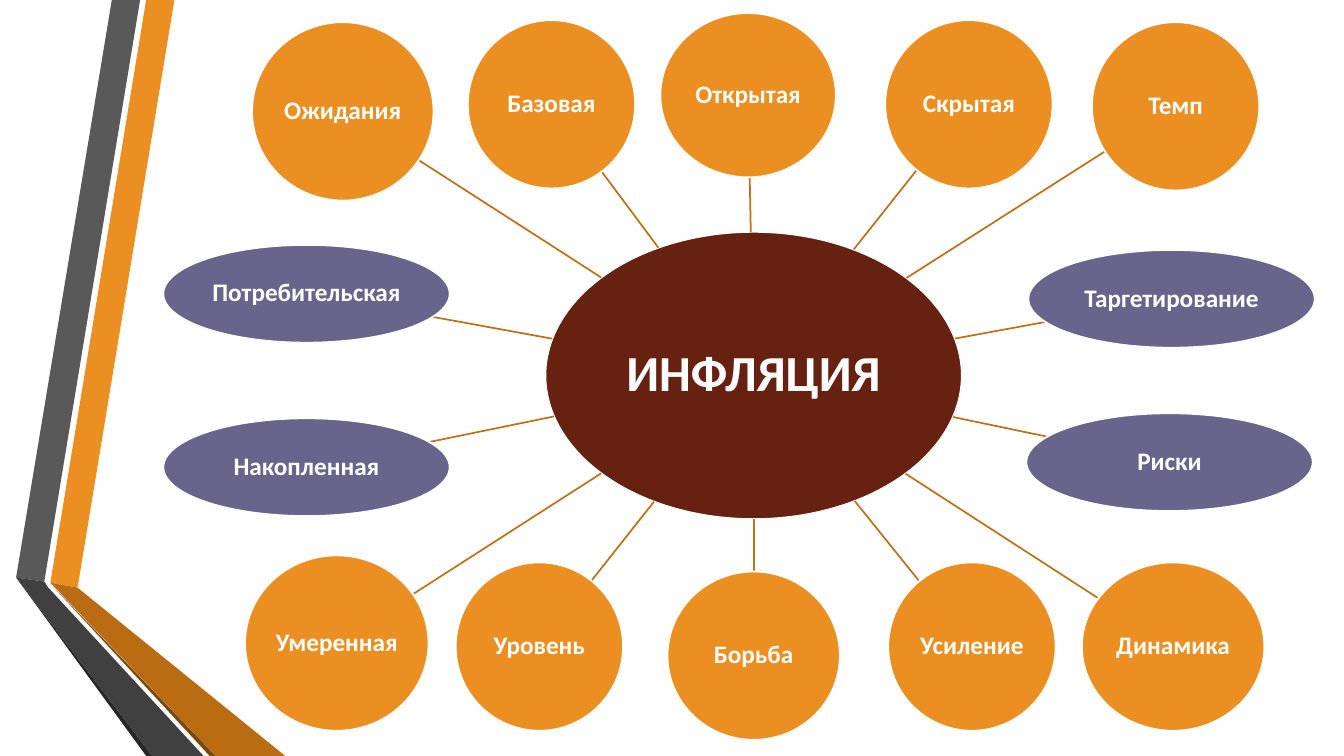
"""Draw a radial map of inflation terms beside a folded ribbon."""
import dataclasses
import math
import typing

import lxml.etree
import pptx
import pptx.dml.color
import pptx.enum.shapes
import pptx.enum.text
import pptx.oxml.ns
import pptx.shapes.shapetree
import pptx.util

PX = 9144
RGB = pptx.dml.color.RGBColor
WHITE = RGB(0xFF, 0xFF, 0xFF)
ORANGE = RGB(0xEB, 0x8F, 0x22)
PURPLE = RGB(0x68, 0x64, 0x8B)
MAROON = RGB(0x66, 0x21, 0x11)
BRONZE = RGB(0xBC, 0x73, 0x1B)
AMBER = RGB(0xB9, 0x6C, 0x11)
BROWN = RGB(0x7B, 0x48, 0x0B)
GREY = RGB(0x59, 0x59, 0x59)
DARK = RGB(0x40, 0x40, 0x40)
BLACK = RGB(0x26, 0x26, 0x26)

Tree = pptx.shapes.shapetree.SlideShapes
Point = tuple[float, float]


@dataclasses.dataclass(frozen=True)
class Band:
    color: RGB
    points: list[Point]


@dataclasses.dataclass(frozen=True)
class Bubble:
    text: str
    left: int
    top: int
    width: int
    height: int
    fill: RGB = ORANGE
    size: int = 18

    @property
    def center(self) -> Point:
        return self.left + self.width / 2, self.top + self.height / 2

    def edge(self, target: Point) -> Point:
        x, y = self.center
        dx, dy = target[0] - x, target[1] - y
        ratio = 1 / math.hypot(2 * dx / self.width, 2 * dy / self.height)
        return x + dx * ratio, y + dy * ratio


BANDS = [
    Band(ORANGE, [(50, 578), (77, 583), (173, 0), (145, 0)]),
    Band(GREY, [(139, 0), (111, 0), (16, 573), (44, 577)]),
    Band(BLACK, [(16, 573), (145, 750), (151, 750)]),
    Band(BROWN, [(50, 579), (208, 750), (214, 750)]),
    Band(AMBER, [(50, 578), (214, 750), (283, 750), (77, 583)]),
    Band(DARK, [(202, 750), (48, 583), (44, 577), (16, 573), (151, 750)]),
]
HUB = Bubble("ИНФЛЯЦИЯ", 541, 230, 413, 285, MAROON, 36)
TERMS = [
    Bubble("Открытая", 655, 13, 174, 163),
    Bubble("Скрытая", 878, 20, 166, 167),
    Bubble("Темп", 1083, 22, 166, 167),
    Bubble("Таргетирование", 1020, 248, 284, 97, PURPLE),
    Bubble("Риски", 1018, 410, 284, 97, PURPLE),
    Bubble("Динамика", 1073, 558, 181, 167),
    Bubble("Усиление", 881, 558, 166, 167),
    Bubble("Борьба", 662, 567, 171, 167),
    Bubble("Уровень", 452, 558, 166, 167),
    Bubble("Умеренная", 243, 551, 182, 174),
    Bubble("Накопленная", 162, 415, 284, 97, PURPLE),
    Bubble("Потребительская", 162, 243, 284, 97, PURPLE),
    Bubble("Ожидания", 250, 22, 180, 177),
    Bubble("Базовая", 464, 20, 166, 167),
]
FRAME = {
    "margin_left": PX, "margin_right": PX,
    "margin_top": PX, "margin_bottom": PX,
    "vertical_anchor": pptx.enum.text.MSO_ANCHOR.MIDDLE,
    "word_wrap": False,
}
PARA = {"alignment": pptx.enum.text.PP_ALIGN.CENTER, "line_spacing": 0.9}
FONT = {"name": "Calibri", "bold": True}


def emu(px: float) -> int:
    return round(px * PX)


def apply(target: typing.Any, values: dict[str, typing.Any]) -> None:
    for name, value in values.items():
        setattr(target, name, value)


def paint(shape: typing.Any, color: RGB) -> None:
    shape.shadow.inherit = False
    shape.fill.solid()
    shape.fill.fore_color.rgb = color


def stroke(line: typing.Any, color: RGB) -> None:
    line.color.rgb = color
    line.width = pptx.util.Pt(1.25)


def draw_band(tree: Tree, band: Band) -> None:
    first, *rest = band.points
    pen = tree.build_freeform(*first, scale=PX)
    pen.add_line_segments(rest, close=True)
    shape = pen.convert_to_shape()
    paint(shape, band.color)
    shape.line.fill.background()


def draw_spoke(tree: Tree, hub: Bubble, term: Bubble) -> None:
    ends = *hub.edge(term.center), *term.edge(hub.center)
    spoke = tree.add_connector(
        pptx.enum.shapes.MSO_CONNECTOR.STRAIGHT, *map(emu, ends))
    stroke(spoke.line, BRONZE)
    lxml.etree.SubElement(
        spoke._element.spPr, pptx.oxml.ns.qn("a:effectLst"))


def draw_bubble(tree: Tree, item: Bubble) -> None:
    box = item.left, item.top, item.width, item.height
    shape = tree.add_shape(
        pptx.enum.shapes.MSO_SHAPE.OVAL, *map(emu, box))
    paint(shape, item.fill)
    stroke(shape.line, WHITE)
    frame = shape.text_frame
    apply(frame, FRAME)
    para = frame.paragraphs[0]
    apply(para, PARA)
    run = para.add_run()
    run.text = item.text
    apply(run.font, FONT | {"size": pptx.util.Pt(item.size)})
    run.font.color.rgb = WHITE


def main() -> None:
    deck = pptx.Presentation()
    apply(deck, {"slide_width": emu(1333), "slide_height": emu(750)})
    tree = deck.slides.add_slide(deck.slide_layouts[6]).shapes
    for band in BANDS:
        draw_band(tree, band)
    draw_bubble(tree, HUB)
    for term in TERMS:
        draw_spoke(tree, HUB, term)
        draw_bubble(tree, term)
    deck.save("out.pptx")


if __name__ == "__main__":
    main()
